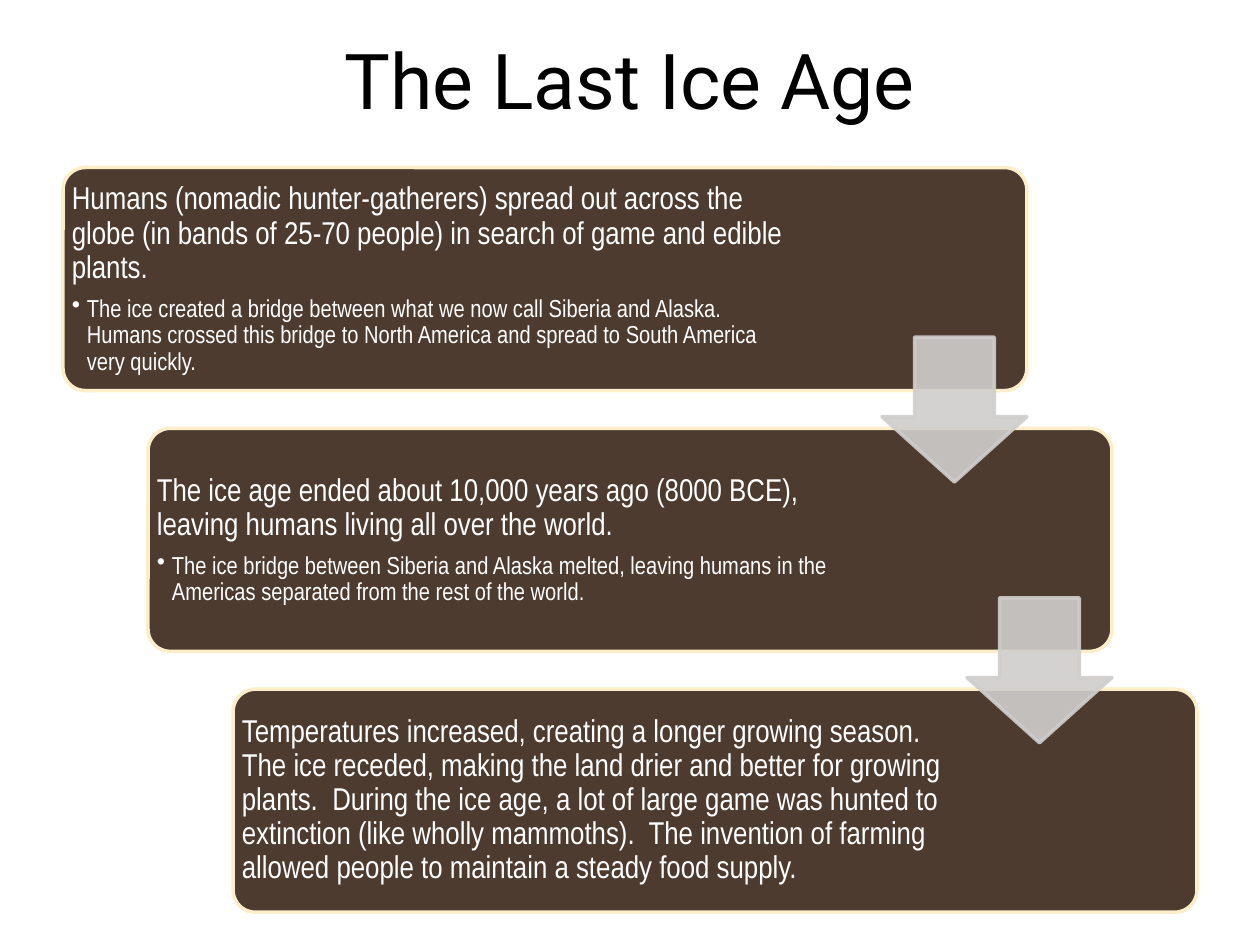
from lxml import etree
from pptx import Presentation
from pptx.dml.color import RGBColor
from pptx.enum.shapes import MSO_SHAPE
from pptx.enum.text import MSO_ANCHOR, PP_ALIGN
from pptx.oxml.ns import qn
from pptx.util import Inches, Pt

ROUNDED = MSO_SHAPE.ROUNDED_RECTANGLE
DOWN_ARROW = MSO_SHAPE.DOWN_ARROW
MIDDLE = MSO_ANCHOR.MIDDLE

# Content: one (statement, detail) pair per step
TITLE = "The Last Ice Age"
STEPS = [
    ("Humans (nomadic hunter-gatherers) spread out across the globe (in bands "
     "of 25-70 people) in search of game and edible plants.",
     "The ice created a bridge between what we now call Siberia and Alaska.  "
     "Humans crossed this bridge to North America and spread to South America "
     "very quickly."),
    ("The ice age ended about 10,000 years ago (8000 BCE), leaving humans "
     "living all over the world.",
     "The ice bridge between Siberia and Alaska melted, leaving humans in the "
     "Americas separated from the rest of the world."),
    ("Temperatures increased, creating a longer growing season.  The ice "
     "receded, making the land drier and better for growing plants.  During "
     "the ice age, a lot of large game was hunted to extinction (like wholly "
     "mammoths).  The invention of farming allowed people to maintain a "
     "steady food supply.", None),
]

# Staircase geometry in inches
SLIDE_W, SLIDE_H = 10, 7.5
MARGIN = 0.5
FIRST_TOP = 1.33
STEP_W, STEP_H = 7.65, 1.77
SHIFT_X = (SLIDE_W - 2 * MARGIN - STEP_W) / (len(STEPS) - 1)
SHIFT_Y = 2.07
TEXT_W = 5.83
INSET = 0.07
ARROW = 1.15
INDENT = 0.12

BROWN, CREAM, GREY = "4E3B30", "FBEEC9", "D0CECD"
WHITE, BLACK = "FFFFFF", "000000"


def rgb(code):
    return RGBColor.from_string(code)


def add_block(slide, kind, box, adjustments, fill, line):
    shape = slide.shapes.add_shape(kind, *map(Inches, box))
    shape.shadow.inherit = False
    for index, value in enumerate(adjustments):
        shape.adjustments[index] = value
    shape.fill.solid()
    shape.fill.fore_color.rgb = rgb(fill)
    shape.line.color.rgb = rgb(line)
    shape.line.width = Pt(2)
    return shape


def set_opacity(shape, percent):
    for color in shape.fill._xPr.iter(qn("a:srgbClr")):
        etree.SubElement(color, qn("a:alpha"), val=str(percent * 1000))


def add_text_frame(slide, box, inset):
    frame = slide.shapes.add_textbox(*map(Inches, box)).text_frame
    frame.word_wrap = True
    frame.vertical_anchor = MIDDLE
    frame.margin_left = frame.margin_right = Inches(inset)
    frame.margin_top = frame.margin_bottom = Inches(inset)
    return frame


def add_run(paragraph, text, font, size, color):
    run = paragraph.add_run()
    run.text = text
    run.font.name = font
    run.font.size = Pt(size)
    run.font.color.rgb = rgb(color)


def add_bullet(paragraph):
    props = paragraph._p.get_or_add_pPr()
    props.set("marL", str(Inches(INDENT)))
    props.set("indent", str(-Inches(INDENT)))
    etree.SubElement(props, qn("a:buChar"), char="•")


def add_step_text(slide, left, top, statement, detail):
    frame = add_text_frame(slide, (left, top, TEXT_W, STEP_H), INSET)
    first = frame.paragraphs[0]
    first.line_spacing = 0.9
    first.space_after = Pt(6.3)
    add_run(first, statement, "Arial Narrow", 18, WHITE)
    if detail:
        second = frame.add_paragraph()
        second.level = 1
        second.line_spacing = 0.9
        second.space_after = Pt(2.1)
        add_bullet(second)
        add_run(second, detail, "Arial Narrow", 14, WHITE)


def main():
    deck = Presentation()
    deck.slide_width, deck.slide_height = Inches(SLIDE_W), Inches(SLIDE_H)
    slide = deck.slides.add_slide(deck.slide_layouts[6])

    # Title
    heading = add_text_frame(slide, (MARGIN, 0, SLIDE_W - 2 * MARGIN, 1.25), 0.05)
    heading.paragraphs[0].alignment = PP_ALIGN.CENTER
    add_run(heading.paragraphs[0], TITLE, "Roboto", 44, BLACK)

    # Steps, each further right and down
    corners = [(MARGIN + i * SHIFT_X, FIRST_TOP + i * SHIFT_Y)
               for i in range(len(STEPS))]
    for (left, top), (statement, detail) in zip(corners, STEPS):
        add_block(slide, ROUNDED, (left, top, STEP_W, STEP_H), [0.1], BROWN, CREAM)
        add_step_text(slide, left, top, statement, detail)

    # Arrows centred on the gaps, flush with the right edge of the upper step
    for left, top in corners[:-1]:
        gap_middle = top + (STEP_H + SHIFT_Y) / 2
        box = (left + STEP_W - ARROW, gap_middle - ARROW / 2, ARROW, ARROW)
        arrow = add_block(slide, DOWN_ARROW, box, [0.55, 0.45], GREY, GREY)
        set_opacity(arrow, 90)

    deck.save("out.pptx")


if __name__ == "__main__":
    main()
